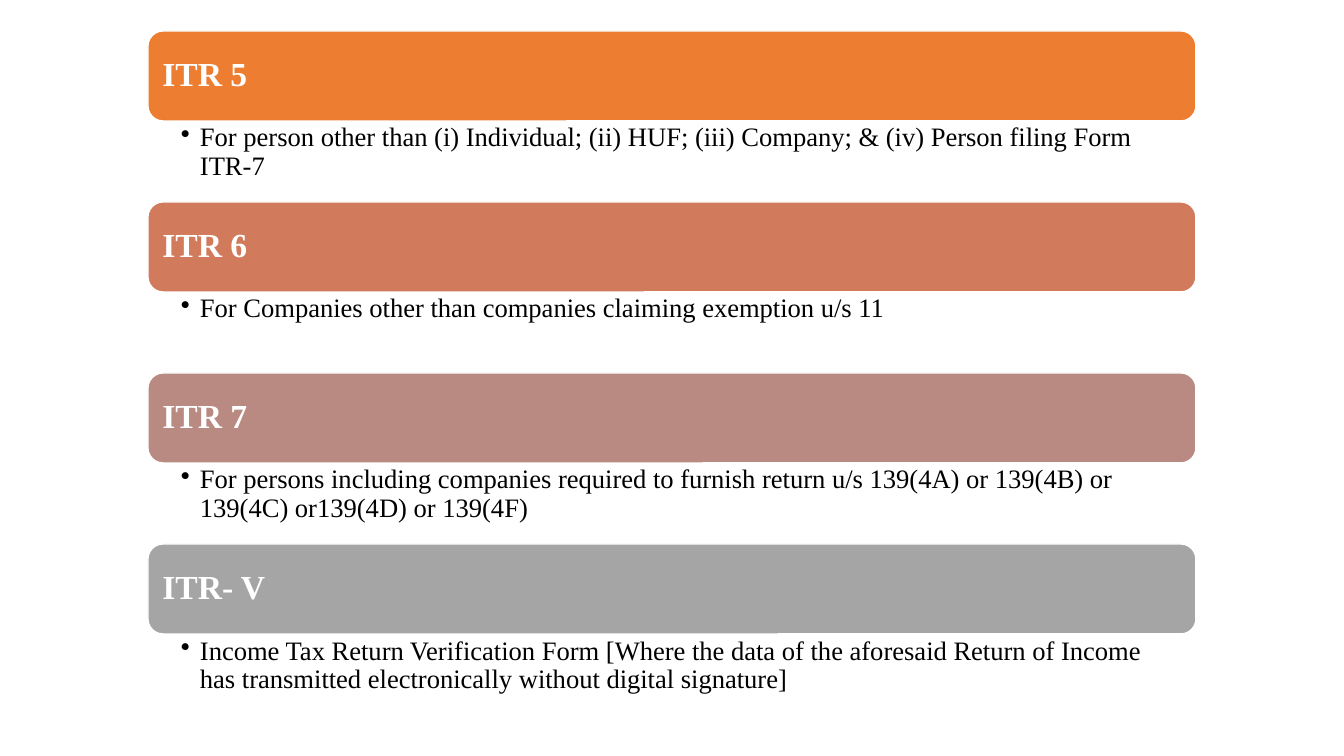
from dataclasses import dataclass

from lxml.etree import SubElement
from pptx import Presentation
from pptx.dml.color import RGBColor
from pptx.enum.shapes import MSO_SHAPE
from pptx.enum.text import MSO_ANCHOR, PP_ALIGN
from pptx.oxml.ns import qn
from pptx.util import Pt

EMU_PER_PX = 914400 / 100.8
SLIDE_WIDTH, SLIDE_HEIGHT = 1344, 756
LEFT, TOP, WIDTH = 148, 31, 1048
BAR_HEIGHT, DETAIL_HEIGHT = 90, 81
BULLET_INDENT = 19


@dataclass(frozen=True)
class Theme:
    """Colours, font and type sizes of the slide."""

    font: str = "Times New Roman"
    heading_size: int = 24
    detail_size: int = 19
    heading_color: str = "FFFFFF"
    detail_color: str = "000000"
    outline: str = "FFFFFF"
    bars: tuple = ("ED7D31", "D17B5C", "B98A82", "A5A5A5")


THEME = Theme()

FORMS = (
    ("ITR 5", "For person other than (i) Individual; (ii) HUF; (iii) Company; "
              "& (iv) Person filing Form ITR-7"),
    ("ITR 6", "For Companies other than companies claiming exemption u/s 11"),
    ("ITR 7", "For persons including companies required to furnish return "
              "u/s 139(4A) or 139(4B) or 139(4C) or139(4D) or 139(4F)"),
    ("ITR- V", "Income Tax Return Verification Form [Where the data of the "
               "aforesaid Return of Income has transmitted electronically "
               "without digital signature]"),
)


def px(length):
    """Turn a length in px into EMU."""
    return round(length * EMU_PER_PX)


def write_text(shape, text, size, color, anchor, insets, bold=False):
    """Write one left-aligned paragraph into a shape and return it."""
    frame = shape.text_frame
    frame.word_wrap = True
    frame.vertical_anchor = anchor
    left, top, right, bottom = map(px, insets)
    frame.margin_left, frame.margin_right = left, right
    frame.margin_top, frame.margin_bottom = top, bottom
    paragraph = frame.paragraphs[0]
    paragraph.alignment = PP_ALIGN.LEFT
    paragraph.line_spacing = 0.9
    run = paragraph.add_run()
    run.text = text
    run.font.name = THEME.font
    run.font.size = Pt(size)
    run.font.bold = bold
    run.font.color.rgb = RGBColor.from_string(color)
    return paragraph


def add_bullet(paragraph):
    """Give a paragraph a hanging round bullet."""
    paragraph.level = 1
    properties = paragraph._p.get_or_add_pPr()
    properties.set("marL", str(px(BULLET_INDENT)))
    properties.set("indent", str(-px(BULLET_INDENT)))
    SubElement(properties, qn("a:buChar")).set("char", "•")


def add_heading_bar(slide, top, text, color):
    """Add a rounded bar that carries the name of a form."""
    bar = slide.shapes.add_shape(
        MSO_SHAPE.ROUNDED_RECTANGLE, px(LEFT), px(top), px(WIDTH), px(BAR_HEIGHT))
    bar.shadow.inherit = False
    bar.fill.solid()
    bar.fill.fore_color.rgb = RGBColor.from_string(color)
    bar.line.color.rgb = RGBColor.from_string(THEME.outline)
    bar.line.width = Pt(1)
    write_text(bar, text, THEME.heading_size, THEME.heading_color,
               MSO_ANCHOR.MIDDLE, (10, 10, 10, 10), bold=True)


def add_detail(slide, top, text):
    """Add the bulleted description below a bar."""
    box = slide.shapes.add_textbox(px(LEFT), px(top), px(WIDTH), px(DETAIL_HEIGHT))
    paragraph = write_text(box, text, THEME.detail_size, THEME.detail_color,
                           MSO_ANCHOR.TOP, (33, 3, 15, 3))
    add_bullet(paragraph)


def main():
    """Build the slide and save it."""
    presentation = Presentation()
    presentation.slide_width = px(SLIDE_WIDTH)
    presentation.slide_height = px(SLIDE_HEIGHT)
    slide = presentation.slides.add_slide(presentation.slide_layouts[6])
    for index, ((heading, detail), color) in enumerate(zip(FORMS, THEME.bars)):
        top = TOP + index * (BAR_HEIGHT + DETAIL_HEIGHT)
        add_heading_bar(slide, top, heading, color)
        add_detail(slide, top + BAR_HEIGHT, detail)
    presentation.save("out.pptx")


if __name__ == "__main__":
    main()
